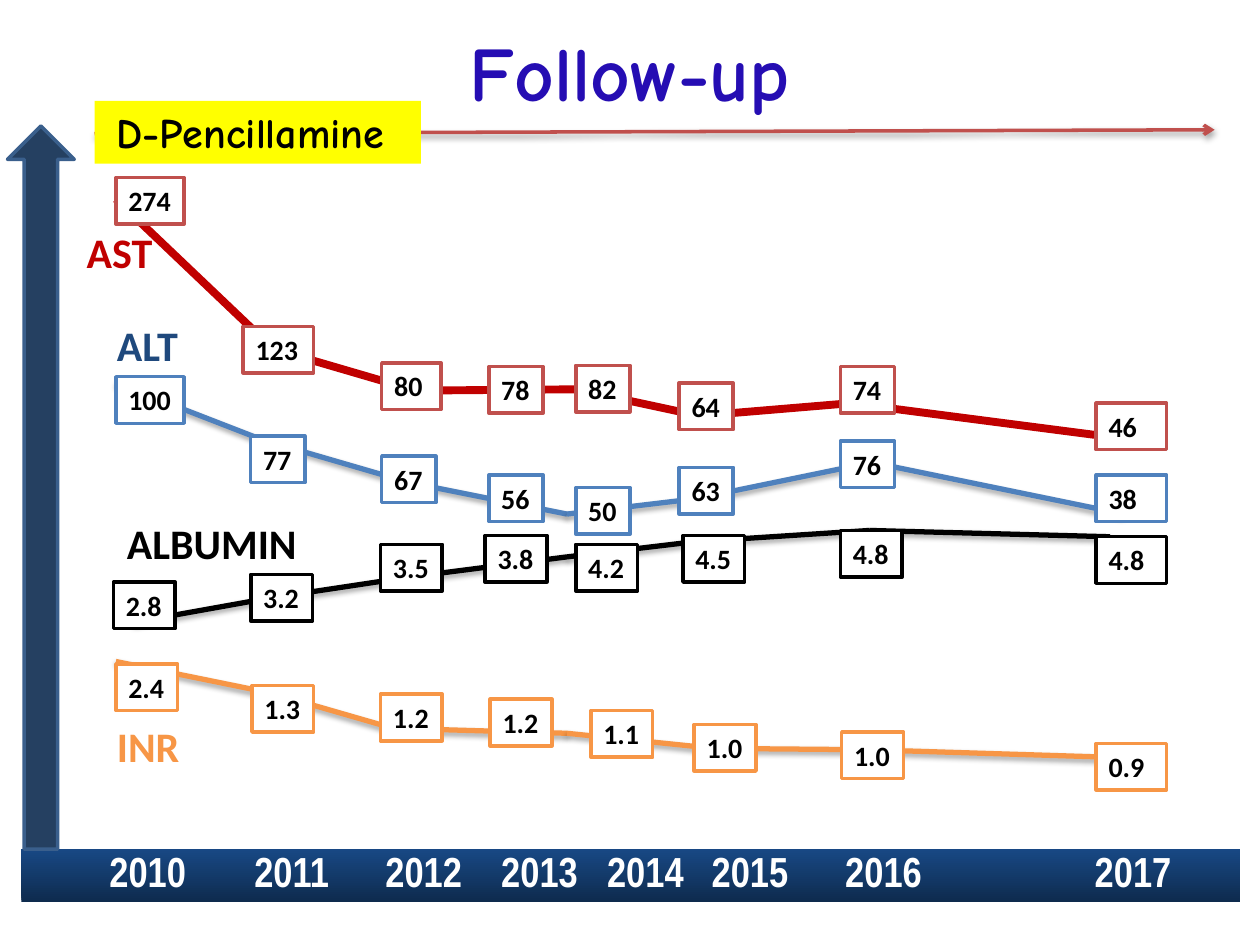
from itertools import pairwise

from lxml import etree
from pptx import Presentation
from pptx.dml.color import RGBColor
from pptx.enum.shapes import MSO_CONNECTOR, MSO_SHAPE
from pptx.enum.text import MSO_ANCHOR, PP_ALIGN
from pptx.oxml.ns import qn
from pptx.util import Cm, Pt

LEFT, CENTER = PP_ALIGN.LEFT, PP_ALIGN.CENTER
TOP, MIDDLE = MSO_ANCHOR.TOP, MSO_ANCHOR.MIDDLE
RECT, UP_ARROW = MSO_SHAPE.RECTANGLE, MSO_SHAPE.UP_ARROW
STRAIGHT = MSO_CONNECTOR.STRAIGHT

BLACK = RGBColor(0x00, 0x00, 0x00)
WHITE = RGBColor(0xFF, 0xFF, 0xFF)
YELLOW = RGBColor(0xFF, 0xFF, 0x00)
VIOLET = RGBColor(0x25, 0x0D, 0xB3)
RED = RGBColor(0xC0, 0x00, 0x00)
BRICK = RGBColor(0xC0, 0x50, 0x4D)
BLUE = RGBColor(0x4F, 0x81, 0xBD)
NAVY = RGBColor(0x1F, 0x49, 0x7D)
ORANGE = RGBColor(0xF7, 0x96, 0x46)
ARROW_FILL = RGBColor(0x25, 0x40, 0x61)
ARROW_LINE = RGBColor(0x3A, 0x5F, 0x8C)
BAR_DARK = RGBColor(0x0E, 0x2B, 0x4E)
BAR_LIGHT = RGBColor(0x18, 0x48, 0x84)

# All positions are in inches.
BAR = (0.17, 6.74, 9.67, 0.42)
YEARS = [("2010", 0.87), ("2011", 2.02), ("2012", 3.06), ("2013", 3.98),
         ("2014", 4.82), ("2015", 5.65), ("2016", 6.71), ("2017", 8.69)]
BOX_WIDTHS = {"two digits": 0.43, "decimal": 0.49, "three digits": 0.54}
WIDE = 0.56
BOX_HEIGHT = 0.37

# Boxes: value, left, top and, where it differs from the usual, width.
SERIES = [
    dict(name="AST", label_at=(0.59, 1.75, 0.73), label_color=RED,
         line=RED, weight=4.5, shadow=False, border=BRICK,
         points=[(0.92, 1.58), (2.17, 2.77), (3.3, 3.1), (4.57, 3.09),
                 (5.55, 3.3), (6.75, 3.2), (8.83, 3.47)],
         boxes=[("274", 0.92, 1.41), ("123", 1.93, 2.59, WIDE),
                ("80", 3.03, 2.88, 0.47), ("78", 3.88, 2.91),
                ("82", 4.57, 2.9), ("64", 5.39, 3.04),
                ("74", 6.67, 2.91), ("46", 8.7, 3.2, WIDE)]),
    dict(name="ALT", label_at=(0.83, 2.49, 0.69), label_color=NAVY,
         line=BLUE, weight=3, shadow=True, border=BLUE,
         points=[(0.92, 3.04), (2.08, 3.49), (3.25, 3.83), (4.5, 4.08),
                 (5.51, 3.96), (6.92, 3.67), (8.92, 4.08)],
         boxes=[("100", 0.92, 2.99), ("77", 1.99, 3.46), ("67", 3.03, 3.62),
                ("56", 3.88, 3.77), ("50", 4.57, 3.87), ("63", 5.39, 3.71),
                ("76", 6.67, 3.5), ("38", 8.7, 3.77, WIDE)]),
    dict(name="ALBUMIN", label_at=(0.91, 4.06, 1.56), label_color=BLACK,
         line=BLACK, weight=3, shadow=True, border=BLACK,
         points=[(1.06, 4.94), (2.12, 4.75), (3.25, 4.58), (4.5, 4.42),
                 (5.51, 4.3), (6.9, 4.21), (8.81, 4.26)],
         boxes=[("2.8", 0.9, 4.62), ("3.2", 1.99, 4.56), ("3.5", 3.02, 4.32),
                ("3.8", 3.85, 4.25), ("4.2", 4.57, 4.32), ("4.5", 5.42, 4.25),
                ("4.8", 6.67, 4.21), ("4.8", 8.7, 4.26, WIDE)]),
    dict(name="INR", label_at=(0.83, 5.67, 0.7), label_color=ORANGE,
         line=ORANGE, weight=3, shadow=True, border=ORANGE,
         points=[(0.92, 5.25), (2.15, 5.5), (3.12, 5.78), (4.5, 5.82),
                 (5.67, 5.94), (6.88, 5.95), (8.81, 6.01)],
         boxes=[("2.4", 0.92, 5.27), ("1.3", 2.0, 5.44), ("1.2", 3.02, 5.51),
                ("1.2", 3.89, 5.55), ("1.1", 4.69, 5.64), ("1.0", 5.51, 5.75),
                ("1.0", 6.68, 5.81), ("0.9", 8.7, 5.9, WIDE)]),
]


def inch(value):
    return Cm(value * 2.54)


def write(sp, text, *, size, color, font="Calibri", align=LEFT, anchor=TOP, wrap=False):
    tf = sp.text_frame
    tf.word_wrap = wrap
    tf.vertical_anchor = anchor
    p = tf.paragraphs[0]
    p.alignment = align
    r = p.add_run()
    r.text = text
    r.font.size = Pt(size)
    r.font.name = font
    r.font.bold = True
    r.font.color.rgb = color
    return p


def add_block(slide, kind, at, fill=None, border=None):
    sp = slide.shapes.add_shape(kind, *map(inch, at))
    sp.shadow.inherit = False
    if fill is not None:
        sp.fill.solid()
        sp.fill.fore_color.rgb = fill
    if border is None:
        sp.line.fill.background()
    else:
        sp.line.color.rgb = border
        sp.line.width = Pt(2)
    return sp


def add_line(slide, start, end, color, weight, shadow=True, arrow=False):
    line = slide.shapes.add_connector(STRAIGHT, *map(inch, start + end))
    line.line.color.rgb = color
    line.line.width = Pt(weight)
    if arrow:
        etree.SubElement(line.line._get_or_add_ln(), qn("a:tailEnd"), type="arrow")
    effects = etree.SubElement(line._element.spPr, qn("a:effectLst"))
    if shadow:
        outer = etree.SubElement(effects, qn("a:outerShdw"), blurRad=str(Pt(3.1)),
                                 dist=str(Pt(1.8)), dir="5400000", rotWithShape="0")
        tint = etree.SubElement(outer, qn("a:srgbClr"), val="000000")
        etree.SubElement(tint, qn("a:alpha"), val="35000")


def add_year_bar(slide):
    sp = add_block(slide, RECT, BAR)
    sp.fill.gradient()
    sp.fill.gradient_angle = 90
    for stop, color in zip(sp.fill.gradient_stops, (BAR_DARK, BAR_LIGHT)):
        stop.color.rgb = color
    text = "".join("\t" + year for year, _ in YEARS)
    p = write(sp, text, size=24, color=WHITE, font="Arial Narrow", wrap=True)
    p.line_spacing = 0.8
    tabs = etree.SubElement(p._p.get_or_add_pPr(), qn("a:tabLst"))
    text_left = BAR[0] + 0.1
    for _, x in YEARS:
        etree.SubElement(tabs, qn("a:tab"), pos=str(inch(x - text_left)), algn="l")


def box_width(value):
    if "." in value:
        return BOX_WIDTHS["decimal"]
    return BOX_WIDTHS["three digits" if len(value) == 3 else "two digits"]


def main():
    prs = Presentation()
    prs.slide_width, prs.slide_height = inch(10), inch(7.5)
    slide = prs.slides.add_slide(prs.slide_layouts[5])

    title = slide.shapes.title
    title.left, title.top, title.width, title.height = map(inch, (0.5, 0.13, 9, 0.87))
    write(title, "Follow-up", size=44, color=VIOLET, font="Comic Neue",
          align=CENTER, anchor=MIDDLE, wrap=True)

    add_year_bar(slide)
    add_block(slide, UP_ARROW, (0.06, 1, 0.53, 5.74), ARROW_FILL, ARROW_LINE)

    for s in SERIES:
        for start, end in pairwise(s["points"]):
            add_line(slide, start, end, s["line"], s["weight"], s["shadow"])

    for s in SERIES:
        label = slide.shapes.add_textbox(*map(inch, s["label_at"] + (0.5,)))
        write(label, s["name"], size=24, color=s["label_color"])
        for value, x, y, *width in s["boxes"]:
            w = width[0] if width else box_width(value)
            sp = add_block(slide, RECT, (x, y, w, BOX_HEIGHT), WHITE, s["border"])
            write(sp, value, size=16, color=BLACK, wrap=bool(width))

    add_line(slide, (0.75, 1.06), (9.64, 1.03), BRICK, 2, arrow=True)
    drug = add_block(slide, RECT, (0.75, 0.8, 2.59, 0.5), YELLOW)
    write(drug, "D-Pencillamine ", size=24, color=BLACK, font="Comic Neue",
          align=CENTER, wrap=True)

    prs.save("out.pptx")


if __name__ == "__main__":
    main()
